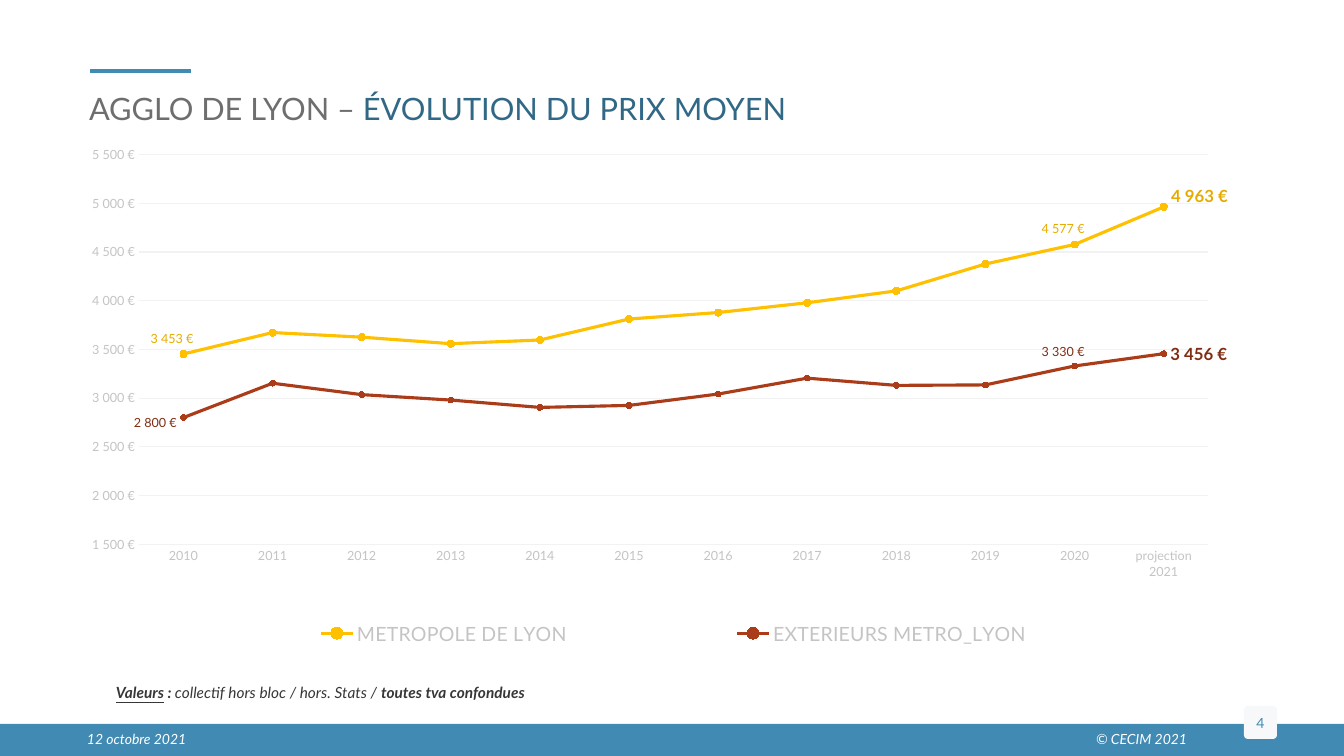
import pptx
import pptx.util
import pptx.chart.data
import pptx.dml.color
import pptx.enum.chart
import pptx.enum.shapes
import pptx.enum.text
import pptx.oxml
import pptx.oxml.ns

RGB = pptx.dml.color.RGBColor
WHITE = RGB(0xFF, 0xFF, 0xFF)
BLUE = RGB(0x41, 0x8A, 0xB3)
NAVY = RGB(0x31, 0x68, 0x86)
GREY = RGB(0x6E, 0x6E, 0x6E)
DARK = RGB(0x37, 0x37, 0x37)
PALE = RGB(0xC4, 0xC4, 0xC4)
GRID = RGB(0xF2, 0xF2, 0xF2)
BADGE = RGB(0xF7, 0xF8, 0xFA)
GOLD = RGB(0xFF, 0xC0, 0x00)
OCHRE = RGB(0xE5, 0xAC, 0x00)
RUST = RGB(0xAB, 0x3C, 0x19)
BROWN = RGB(0x80, 0x2D, 0x13)

ALIGN = pptx.enum.text.PP_ALIGN
MIDDLE = pptx.enum.text.MSO_ANCHOR.MIDDLE
TOP = pptx.enum.text.MSO_ANCHOR.TOP
SHAPE = pptx.enum.shapes.MSO_SHAPE
CHART = pptx.enum.chart
POS = CHART.XL_LABEL_POSITION
EURO = '#\\ ##0\\ "€"'

YEARS = [str(year) for year in range(2010, 2021)] + ["projection 2021"]
# name, values, line colour, label colour, marker size,
# labels: point -> (position, shift x, shift y, text size, bold)
LINES = [
    ("METROPOLE DE LYON",
     [3453, 3673, 3626, 3559, 3597, 3812, 3879, 3979, 4101, 4377, 4577, 4963],
     GOLD, OCHRE, 5,
     {0: (POS.ABOVE, -0.01, 0, 9, False),
      10: (POS.ABOVE, -0.01, 0, 9, False),
      11: (POS.RIGHT, 0, -0.02, 12, True)}),
    ("EXTERIEURS METRO_LYON",
     [2800, 3153, 3036, 2980, 2905, 2925, 3042, 3205, 3131, 3136, 3330, 3456],
     RUST, BROWN, 4,
     {0: (POS.LEFT, 0, 0.01, 9, False),
      10: (POS.ABOVE, -0.01, 0, 9, False),
      11: (POS.RIGHT, 0, 0, 12, True)}),
]


def px(count):
    return pptx.util.Emu(round(count * 914400 / 100.8))


def layout(x, y, w=None, h=None, inner=False):
    """Manual chart layout; without a size, x and y are shifts."""
    rows = [("layoutTarget", "inner")] if inner else []
    if w is not None:
        rows += [("xMode", "edge"), ("yMode", "edge")]
    rows += [("x", x), ("y", y)]
    if w is not None:
        rows += [("w", w), ("h", h)]
    body = "".join(f'<c:{tag} val="{val}"/>' for tag, val in rows)
    return pptx.oxml.parse_xml(
        f'<c:layout {pptx.oxml.ns.nsdecls("c")}>'
        f"<c:manualLayout>{body}</c:manualLayout></c:layout>")


class Deck:
    def __init__(self, font):
        self.font = font
        self.prs = pptx.Presentation()
        self.prs.slide_width, self.prs.slide_height = px(1344), px(756)
        self.slide = self.prs.slides.add_slide(self.prs.slide_layouts[5])
        self.shapes = self.slide.shapes

    def style(self, font, size, color, bold=False, italic=False):
        font.name, font.size = self.font, pptx.util.Pt(size)
        font.color.rgb, font.bold, font.italic = color, bold, italic

    def put(self, shape, runs, size, align=ALIGN.LEFT, anchor=TOP,
            inset=10, italic=False):
        """Fill a shape with runs of (text, colour, bold, underline)."""
        frame = shape.text_frame
        frame.word_wrap, frame.vertical_anchor = True, anchor
        frame.margin_left = frame.margin_right = px(inset)
        frame.margin_top = frame.margin_bottom = px(5)
        para = frame.paragraphs[0]
        para.alignment = align
        for text, color, bold, under in runs:
            run = para.add_run()
            run.text = text
            self.style(run.font, size, color, bold, italic)
            run.font.underline = under

    def title(self, box, runs, size):
        shape = self.shapes.title
        shape.left, shape.top, shape.width, shape.height = map(px, box)
        self.put(shape, runs, size, anchor=MIDDLE)

    def text(self, box, runs, size, **look):
        shape = self.shapes.add_textbox(*map(px, box))
        self.put(shape, runs, size, **look)

    def block(self, kind, box, color):
        shape = self.shapes.add_shape(kind, *map(px, box))
        shape.shadow.inherit = False
        shape.fill.solid()
        shape.fill.fore_color.rgb = color
        shape.line.fill.background()
        return shape

    def rule(self, ends, color, width):
        line = self.shapes.add_connector(
            pptx.enum.shapes.MSO_CONNECTOR.STRAIGHT, *map(px, ends))
        line.line.color.rgb, line.line.width = color, pptx.util.Pt(width)
        line._element.spPr.append(pptx.oxml.parse_xml(
            f'<a:effectLst {pptx.oxml.ns.nsdecls("a")}/>'))

    def label(self, series, index, color, place, dx, dy, size, bold):
        label = series.points[index].data_label
        self.style(label.font, size, color, bold)
        label.position = place
        if dx or dy:
            mark = series._element.xpath(
                f'c:dLbls/c:dLbl/c:idx[@val="{index}"]')[0]
            mark.addnext(layout(dx, dy))

    def axis(self, axis):
        axis.major_tick_mark = axis.minor_tick_mark = CHART.XL_TICK_MARK.NONE
        self.style(axis.tick_labels.font, 9, PALE)

    def chart(self, box):
        data = pptx.chart.data.CategoryChartData(number_format=EURO)
        data.categories = YEARS
        for name, values, *_ in LINES:
            data.add_series(name, values)
        chart = self.shapes.add_chart(
            CHART.XL_CHART_TYPE.LINE_MARKERS, *map(px, box), data).chart
        chart.has_title = False
        self.style(chart.font, 10, PALE)
        plot = chart.plots[0]
        plot.vary_by_categories = False

        years, prices = chart.category_axis, chart.value_axis
        self.axis(years)
        self.axis(prices)
        prices.minimum_scale, prices.maximum_scale = 1500, 5500
        prices.major_unit = 500
        prices.tick_labels.number_format = EURO
        prices.tick_labels.number_format_is_linked = False
        prices.format.line.fill.background()
        for line in (years.format.line, prices.major_gridlines.format.line):
            line.color.rgb, line.width = GRID, pptx.util.Pt(0.75)

        for series, row in zip(plot.series, LINES):
            _, _, color, ink, size, labels = row
            series.smooth = False
            series.format.line.color.rgb = color
            series.format.line.width = pptx.util.Pt(2.25)
            marker = series.marker
            marker.style, marker.size = CHART.XL_MARKER_STYLE.CIRCLE, size
            marker.format.fill.solid()
            marker.format.fill.fore_color.rgb = color
            marker.format.line.color.rgb = color
            series.data_labels.show_value = False
            for index, look in labels.items():
                self.label(series, index, ink, *look)

        chart.has_legend = True
        legend = chart.legend
        legend.position = CHART.XL_LEGEND_POSITION.RIGHT
        legend.include_in_layout = False
        self.style(legend.font, 14, PALE)
        area = chart._chartSpace.chart.plotArea
        for part, new in ((area, layout(0.054, 0.027, 0.932, 0.719, True)),
                          (legend._element, layout(0.07, 0.86, 0.9, 0.1))):
            for old in part.xpath("c:layout"):
                part.remove(old)
            spots = part.xpath("c:legendPos")
            if spots:
                spots[0].addnext(new)
            else:
                part.insert(0, new)


def main():
    deck = Deck("Lato")
    deck.block(SHAPE.RECTANGLE, (0, 724, 1344, 32), BLUE)
    deck.rule((90, 71, 191, 71), BLUE, 3.5)
    badge = deck.block(SHAPE.ROUNDED_RECTANGLE, (1244, 706, 33, 33), BADGE)
    badge.adjustments[0] = 0.12
    deck.put(badge, [("4", BLUE, False, False)], 10,
             align=ALIGN.CENTER, anchor=MIDDLE, inset=0)
    deck.title((79, 45, 1229, 126),
               [("AGGLO DE LYON – ", GREY, False, False),
                ("ÉVOLUTION DU PRIX MOYEN", NAVY, False, False)], 22)
    deck.text((614, 726, 583, 27), [("© CECIM 2021", WHITE, False, False)],
              10, align=ALIGN.RIGHT, italic=True)
    deck.text((116, 669, 754, 46),
              [("Valeurs", DARK, True, True), (" : ", DARK, True, False),
               ("collectif hors bloc / hors. Stats / ", DARK, False, False),
               ("toutes tva confondues", DARK, True, False)],
              11, anchor=MIDDLE, inset=0, italic=True)
    deck.text((77, 726, 313, 27), [("12 octobre 2021", WHITE, False, False)],
              10, italic=True)
    deck.chart((77, 140, 1151, 542))
    deck.prs.save("out.pptx")


if __name__ == "__main__":
    main()
